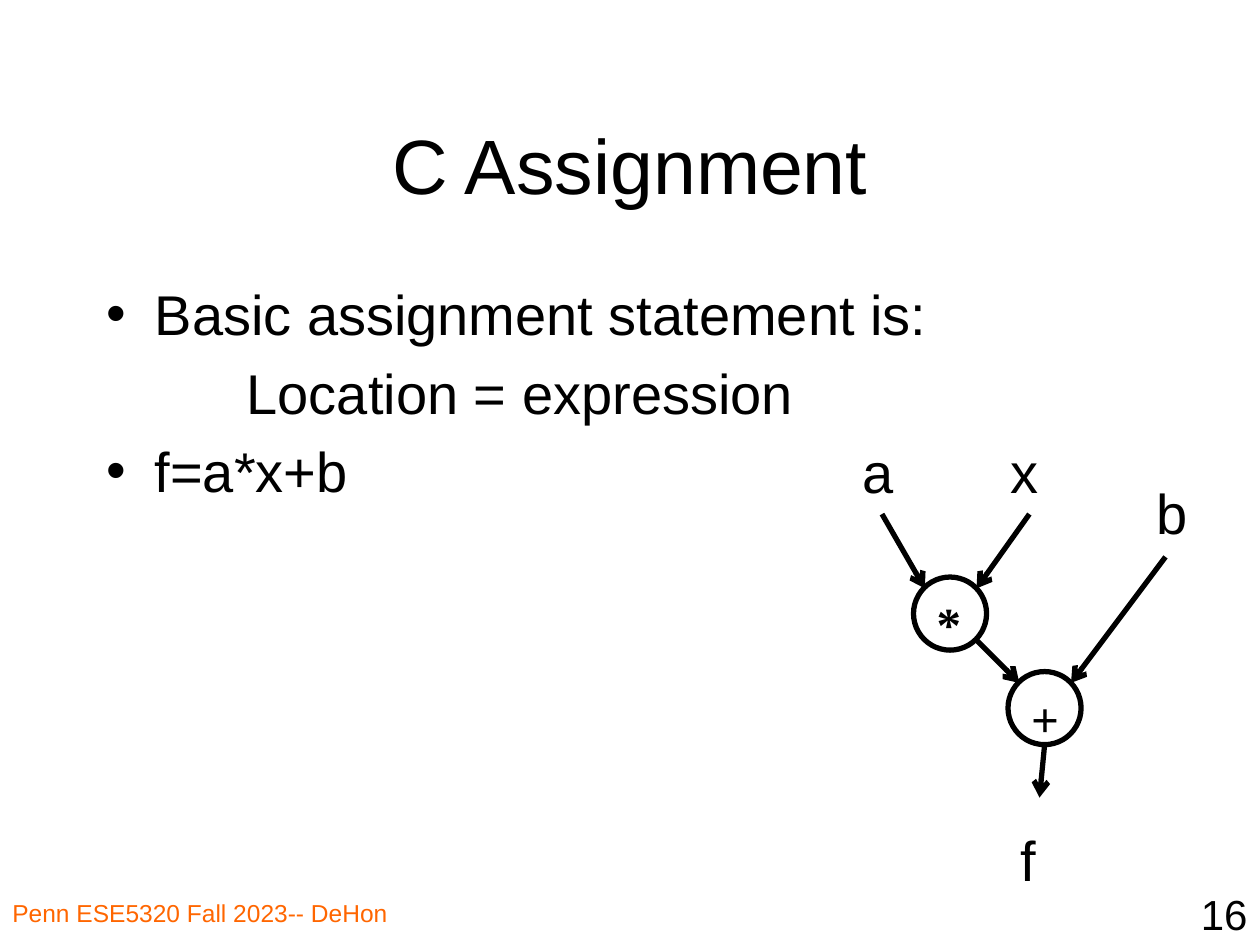
"""Build the slide on C assignment with its dataflow graph."""
from lxml import etree
from pptx import Presentation
from pptx.dml.color import RGBColor
from pptx.enum.shapes import MSO_CONNECTOR, MSO_SHAPE
from pptx.enum.text import MSO_ANCHOR, PP_ALIGN
from pptx.oxml.ns import qn
from pptx.util import Inches, Pt

BLACK = RGBColor(0x00, 0x00, 0x00)
ORANGE = RGBColor(0xFF, 0x66, 0x00)
LEFT, CENTER, RIGHT = PP_ALIGN.LEFT, PP_ALIGN.CENTER, PP_ALIGN.RIGHT
TOP, MIDDLE = MSO_ANCHOR.TOP, MSO_ANCHOR.MIDDLE
OVAL = MSO_SHAPE.OVAL
STRAIGHT = MSO_CONNECTOR.STRAIGHT


def add_run(para, text, size, color=BLACK, font="Arial", bold=False):
    run = para.add_run()
    run.text = text
    run.font.size = Pt(size)
    run.font.name = font
    run.font.bold = bold
    run.font.color.rgb = color


def add_box(left, top, width, height, wrap=True):
    box = slide.shapes.add_textbox(
        Inches(left), Inches(top), Inches(width), Inches(height))
    box.text_frame.word_wrap = wrap
    return box.text_frame


prs = Presentation()
prs.slide_width = Inches(10)
prs.slide_height = Inches(7.5)
slide = prs.slides.add_slide(prs.slide_layouts[6])

for text, place, size, color, align, anchor in [
    ("Penn ESE5320 Fall 2023-- DeHon", (0, 7.08, 3.83, 0.42), 14, ORANGE, LEFT, TOP),
    ("16", (7.92, 7, 2.08, 0.5), 24, BLACK, RIGHT, TOP),
    ("C Assignment", (0.75, 0.67, 8.5, 1.25), 44, BLACK, CENTER, MIDDLE),
]:
    frame = add_box(*place)
    frame.vertical_anchor = anchor
    para = frame.paragraphs[0]
    para.alignment = align
    add_run(para, text, size, color)

body = add_box(0.75, 2.17, 8.5, 4.5)
for row, (text, margin, indent) in enumerate([
    ("Basic assignment statement is:", 0.38, -0.38),
    ("Location = expression", 1.11, 0),
    ("f=a*x+b", 0.38, -0.38),
]):
    para = body.add_paragraph() if row else body.paragraphs[0]
    add_run(para, text, 32)
    props = para._p.get_or_add_pPr()
    props.set("marL", str(Inches(margin)))
    props.set("indent", str(Inches(indent)))
    space = etree.SubElement(props, qn("a:spcBef"))
    etree.SubElement(space, qn("a:spcPct"), val="20000")
    if indent:
        etree.SubElement(props, qn("a:buFont"), typeface="Arial")
        etree.SubElement(props, qn("a:buChar"), char="•")

for sign, left, top in [("*", 7.25, 4.58), ("+", 8, 5.33)]:
    node = slide.shapes.add_shape(
        OVAL, Inches(left), Inches(top), Inches(0.58), Inches(0.58))
    node.shadow.inherit = False
    node.fill.background()
    node.line.color.rgb = BLACK
    node.line.width = Pt(3)
    node.text_frame.vertical_anchor = TOP
    para = node.text_frame.paragraphs[0]
    para.alignment = LEFT
    add_run(para, sign, 28, font="Times New Roman", bold=True)

for ends in [
    (7.75, 5.08, 8.09, 5.42),
    (9.25, 4.42, 8.5, 5.42),
    (7, 4.08, 7.34, 4.67),
    (8.17, 4.08, 7.75, 4.67),
    (8.29, 5.92, 8.25, 6.33),
]:
    edge = slide.shapes.add_connector(STRAIGHT, *map(Inches, ends))
    edge.line.color.rgb = BLACK
    edge.line.width = Pt(3)
    etree.SubElement(edge.line._get_or_add_ln(), qn("a:tailEnd"), type="arrow")
    etree.SubElement(edge._element.spPr, qn("a:effectLst"))

for name, left, top, width, wrap in [
    ("a", 6.75, 3.42, 0.58, True),
    ("x", 7.92, 3.42, 0.58, True),
    ("b", 9.08, 3.75, 0.58, True),
    ("f", 8, 6.5, 0.36, False),
]:
    frame = add_box(left, top, width, 0.64, wrap)
    add_run(frame.paragraphs[0], name, 32)

prs.save("out.pptx")
